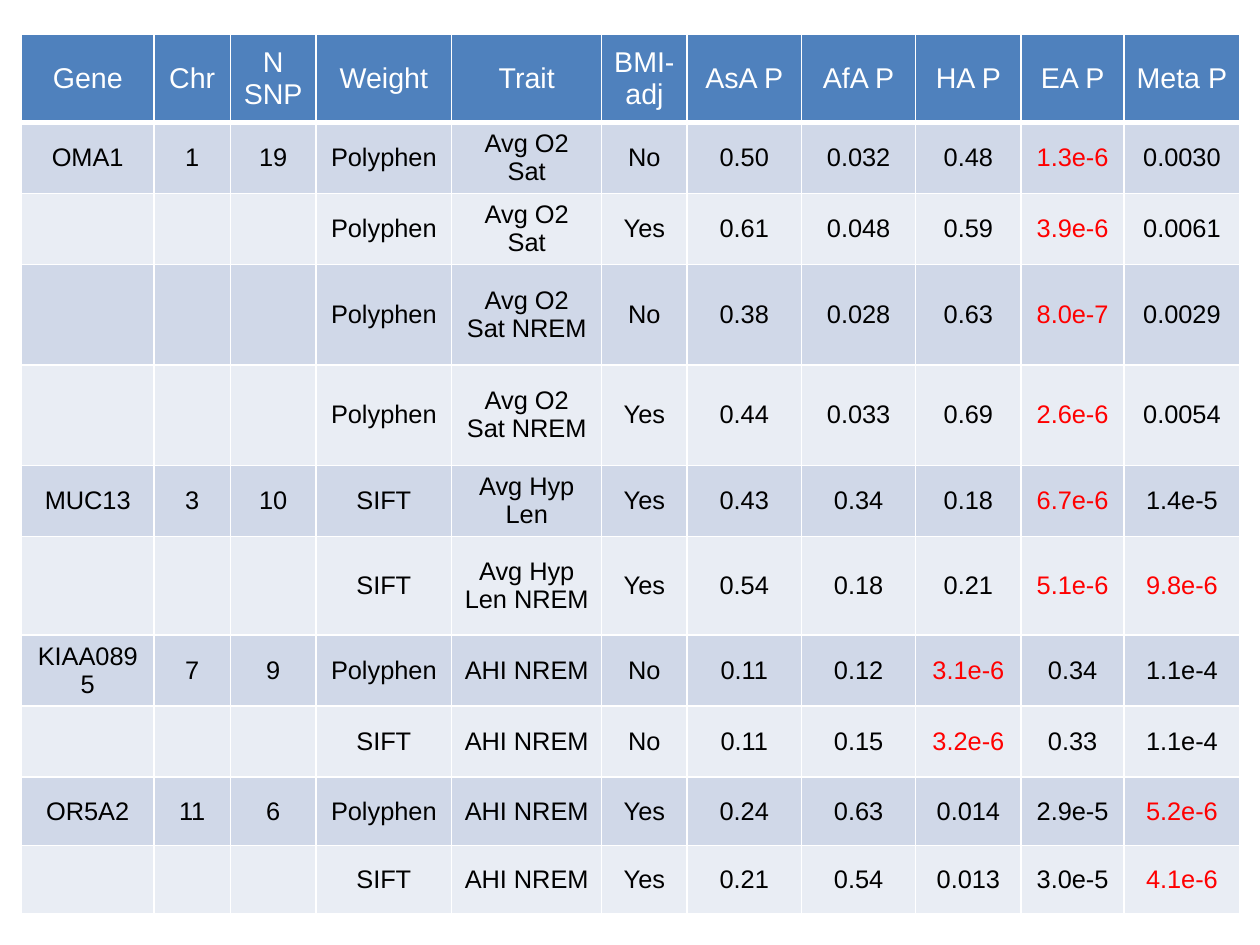
from lxml.etree import SubElement
from pptx import Presentation
from pptx.dml.color import RGBColor
from pptx.enum.text import MSO_ANCHOR as Anchor, PP_ALIGN as Align
from pptx.oxml.ns import qn
from pptx.util import Cm, Pt

HEAD = ["Gene", "Chr", "N SNP", "Weight", "Trait", "BMI-adj",
        "AsA P", "AfA P", "HA P", "EA P", "Meta P"]
BODY = [
    ["OMA1", "1", "19", "Polyphen", "Avg O2 Sat", "No",
     "0.50", "0.032", "0.48", "1.3e-6", "0.0030"],
    ["", "", "", "Polyphen", "Avg O2 Sat", "Yes",
     "0.61", "0.048", "0.59", "3.9e-6", "0.0061"],
    ["", "", "", "Polyphen", "Avg O2 Sat NREM", "No",
     "0.38", "0.028", "0.63", "8.0e-7", "0.0029"],
    ["", "", "", "Polyphen", "Avg O2 Sat NREM", "Yes",
     "0.44", "0.033", "0.69", "2.6e-6", "0.0054"],
    ["MUC13", "3", "10", "SIFT", "Avg Hyp Len", "Yes",
     "0.43", "0.34", "0.18", "6.7e-6", "1.4e-5"],
    ["", "", "", "SIFT", "Avg Hyp Len NREM", "Yes",
     "0.54", "0.18", "0.21", "5.1e-6", "9.8e-6"],
    ["KIAA0895", "7", "9", "Polyphen", "AHI NREM", "No",
     "0.11", "0.12", "3.1e-6", "0.34", "1.1e-4"],
    ["", "", "", "SIFT", "AHI NREM", "No",
     "0.11", "0.15", "3.2e-6", "0.33", "1.1e-4"],
    ["OR5A2", "11", "6", "Polyphen", "AHI NREM", "Yes",
     "0.24", "0.63", "0.014", "2.9e-5", "5.2e-6"],
    ["", "", "", "SIFT", "AHI NREM", "Yes",
     "0.21", "0.54", "0.013", "3.0e-5", "4.1e-6"],
]
WIDTHS = [2.94, 1.7, 1.9, 3.02, 3.33, 1.9, 2.54, 2.54, 2.34, 2.29, 2.57]
HEIGHTS = [1.95, 1.58, 1.58, 2.23, 2.23, 1.58, 2.19, 1.58, 1.58, 1.52, 1.52]
FIRST_P = HEAD.index("AsA P")
LIMIT = 1e-5  # P values below this are shown in red
WHITE, BLACK, RED, BLUE = "FFFFFF", "000000", "FF0000", "4F81BD"
BANDS = ["E9EDF4", "D0D8E8"]


def rgb(code):
    return RGBColor.from_string(code)


def add_edges(cell, low):
    """Draw white borders, 1 pt wide except the bottom one."""
    props = cell._tc.get_or_add_tcPr()
    for side in "LRTB":
        width = low if side == "B" else 1
        line = SubElement(props, qn(f"a:ln{side}"), w=str(Pt(width)))
        fill = SubElement(line, qn("a:solidFill"))
        SubElement(fill, qn("a:srgbClr"), val=WHITE)


def fill_cell(cell, text, size, ink, back, low):
    add_edges(cell, low)
    cell.fill.solid()
    cell.fill.fore_color.rgb = rgb(back)
    cell.vertical_anchor = Anchor.MIDDLE
    cell.margin_left = cell.margin_right = Cm(0.27)
    cell.margin_top = cell.margin_bottom = Cm(0.14)
    if text:
        para = cell.text_frame.paragraphs[0]
        para.alignment = Align.CENTER
        run = para.add_run()
        run.text = text
        font = run.font
        font.name, font.size, font.bold = "Arial", Pt(size), False
        font.color.rgb = rgb(ink)


def main():
    deck = Presentation()
    deck.slide_width, deck.slide_height = Cm(28), Cm(21)
    slide = deck.slides.add_slide(deck.slide_layouts[6])
    rows = [HEAD] + BODY
    table = slide.shapes.add_table(
        len(rows), len(HEAD), Cm(0.48), Cm(0.77),
        Cm(sum(WIDTHS)), Cm(sum(HEIGHTS))).table
    for col, width in zip(table.columns, WIDTHS):
        col.width = Cm(width)
    for row, height in zip(table.rows, HEIGHTS):
        row.height = Cm(height)
    for r, row in enumerate(rows):
        for c, text in enumerate(row):
            cell = table.cell(r, c)
            if r == 0:
                fill_cell(cell, text, 18, WHITE, BLUE, 3)
            else:
                hit = c >= FIRST_P and float(text) < LIMIT
                fill_cell(cell, text, 16, RED if hit else BLACK, BANDS[r % 2], 1)
    deck.save("out.pptx")


if __name__ == "__main__":
    main()
